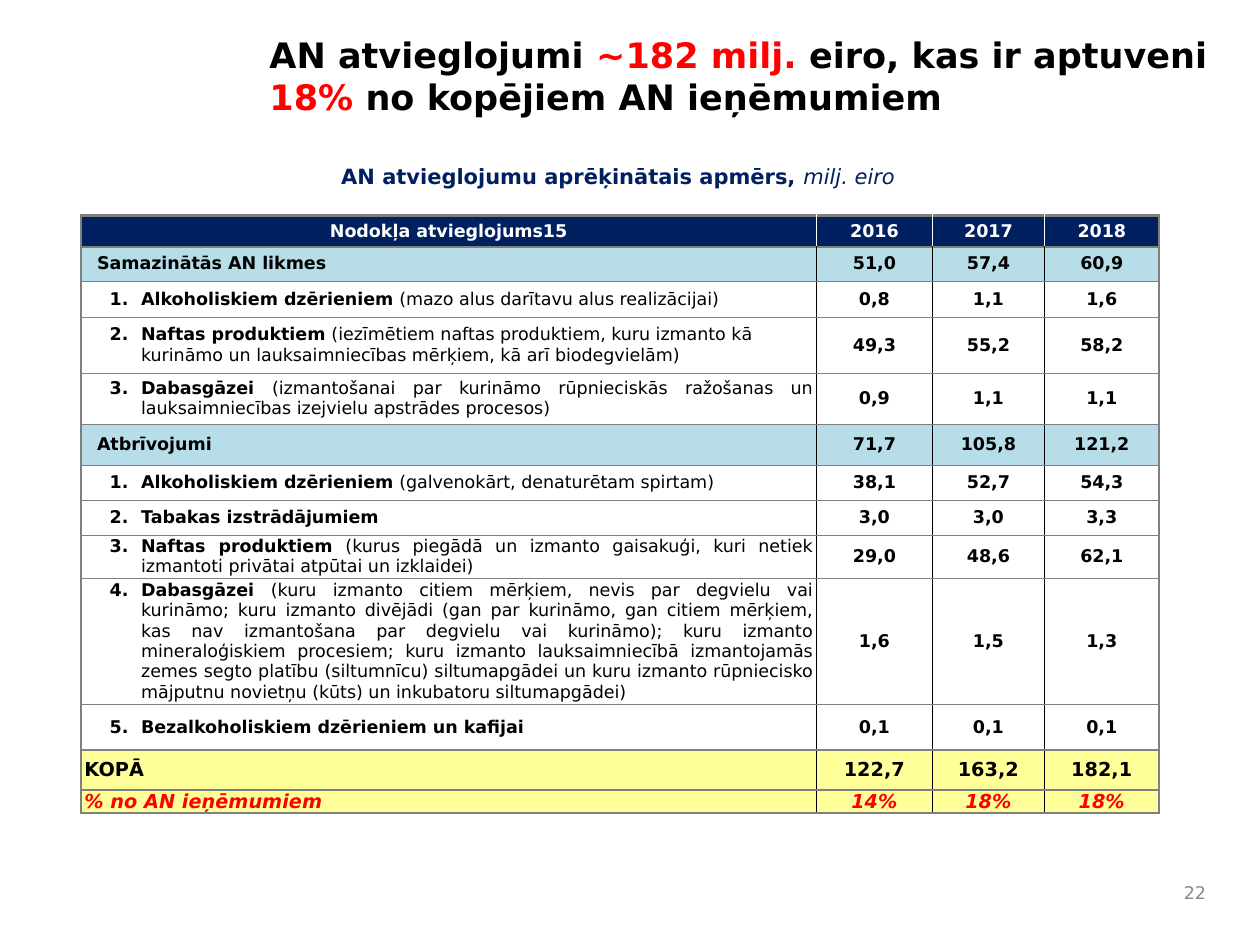
"""Build a slide on excise duty reliefs: heading, caption and a table by year."""
import pptx
import pptx.dml.color
import pptx.enum.text
import pptx.oxml.ns
import pptx.util
from lxml import etree

ALIGN = pptx.enum.text.PP_ALIGN
ANCHOR = pptx.enum.text.MSO_ANCHOR

THEME = {
    "font": "DejaVu Sans",
    "black": "000000", "white": "FFFFFF", "red": "FF0000", "navy": "002060",
    "blue": "B7DEE8", "yellow": "FFFF99", "rule": "808080", "muted": "898989",
    "heading": 20, "caption": 12, "total": 11, "body": 10,
    "thick": 1.5, "medium": 0.5, "thin": 0.25,
}
SLIDE_WIDTH, SLIDE_HEIGHT = 10, 7.5

HEADING = [("AN atvieglojumi ", "black"), ("~182 milj.", "red"),
           ("\xa0eiro, kas ir aptuveni ", "black"), ("18%", "red"),
           (" no kopējiem AN ieņēmumiem", "black")]
CAPTION = ("AN atvieglojumu aprēķinātais apmērs, ", "milj. eiro")
PAGE_NUMBER = "22"

RELIEFS = [
    ("header", 0.25, "Nodokļa atvieglojums15", "", "2016 2017 2018"),
    ("group", 0.27, "Samazinātās AN likmes", "", "51,0 57,4 60,9"),
    ("item", 0.29, "Alkoholiskiem dzērieniem ", "(mazo alus darītavu alus realizācijai)",
     "0,8 1,1 1,6"),
    ("item", 0.44, "Naftas produktiem ",
     "(iezīmētiem naftas produktiem, kuru izmanto kā kurināmo un lauksaimniecības "
     "mērķiem, kā arī biodegvielām)", "49,3 55,2 58,2"),
    ("justified", 0.41, "Dabasgāzei ",
     "(izmantošanai par kurināmo rūpnieciskās ražošanas un lauksaimniecības "
     "izejvielu apstrādes procesos)", "0,9 1,1 1,1"),
    ("group", 0.32, "Atbrīvojumi", "", "71,7 105,8 121,2"),
    ("justified", 0.28, "Alkoholiskiem dzērieniem ", "(galvenokārt, denaturētam spirtam)",
     "38,1 52,7 54,3"),
    ("justified", 0.28, "Tabakas izstrādājumiem", "", "3,0 3,0 3,3"),
    ("justified", 0.34, "Naftas produktiem ",
     "(kurus piegādā un izmanto gaisakuģi, kuri netiek izmantoti privātai atpūtai "
     "un izklaidei)", "29,0 48,6 62,1"),
    ("justified", 1.0, "Dabasgāzei ",
     "(kuru izmanto citiem mērķiem, nevis par degvielu vai kurināmo; kuru izmanto "
     "divējādi (gan par kurināmo, gan citiem mērķiem, kas nav izmantošana par degvielu "
     "vai kurināmo); kuru izmanto mineraloģiskiem procesiem; kuru izmanto "
     "lauksaimniecībā izmantojamās zemes segto platību (siltumnīcu) siltumapgādei un "
     "kuru izmanto rūpniecisko mājputnu novietņu (kūts) un inkubatoru siltumapgādei)",
     "1,6 1,5 1,3"),
    ("item", 0.36, "Bezalkoholiskiem dzērieniem un kafijai", "", "0,1 0,1 0,1"),
    ("total", 0.32, "KOPĀ", "", "122,7 163,2 182,1"),
    ("share", 0.18, "% no AN ieņēmumiem", "", "14% 18% 18%"),
]
COLUMN_WIDTHS = [5.84, 0.92, 0.89, 0.91]

ROW_LOOKS = {
    "header": ("navy", "white", "body", ALIGN.CENTER),
    "group": ("blue", "black", "body", ALIGN.LEFT),
    "item": ("white", "black", "body", ALIGN.LEFT),
    "justified": ("white", "black", "body", ALIGN.JUSTIFY),
    "total": ("yellow", "black", "total", ALIGN.LEFT),
    "share": ("yellow", "red", "total", ALIGN.LEFT),
}
NUMBERED = ("item", "justified")
FRAMED = ("header", "total", "share")


def rgb(name):
    return pptx.dml.color.RGBColor.from_string(THEME[name])


def set_font(paragraph, size, color=None, bold=None, italic=None):
    font = paragraph.font
    font.name, font.size = THEME["font"], pptx.util.Pt(THEME[size])
    font.bold, font.italic = bold, italic
    if color:
        font.color.rgb = rgb(color)


def add_run(paragraph, text):
    run = paragraph.add_run()
    run.text = text
    return run


def add_text_area(slide, left, top, width, height):
    area = slide.shapes.add_textbox(*map(pptx.util.Inches, (left, top, width, height)))
    area.text_frame.word_wrap = True
    return area.text_frame


def add_child(parent, tag, **attributes):
    return etree.SubElement(parent, pptx.oxml.ns.qn(tag), **attributes)


def indent(paragraph, margin, hanging=0, number=None):
    properties = paragraph._p.get_or_add_pPr()
    properties.set("marL", str(pptx.util.Inches(margin)))
    properties.set("indent", str(pptx.util.Inches(-hanging)))
    if number:
        add_child(properties, "a:buFont", typeface="+mj-lt")
        add_child(properties, "a:buAutoNum", type="arabicPeriod", startAt=str(number))


def set_borders(cell, sides):
    properties = cell._tc.get_or_add_tcPr()
    for side, (color, weight) in zip("LRTB", sides):
        line = add_child(properties, f"a:ln{side}", w=str(pptx.util.Pt(THEME[weight])))
        add_child(add_child(line, "a:solidFill"), "a:srgbClr", val=THEME[color])


def cell_borders(row, column):
    kinds = [relief[0] for relief in RELIEFS]
    outer = ("rule", "thick")
    inner = ("white" if kinds[row] == "header" else "black", "medium")

    def level(edge):
        framed = any(kind in FRAMED for kind in kinds[max(edge - 1, 0):edge + 1])
        return outer if framed else ("rule", "thin")

    return (outer if column == 0 else inner,
            outer if column == len(COLUMN_WIDTHS) - 1 else inner,
            level(row), level(row + 1))


def add_reliefs(slide, left, top):
    heights = [relief[1] for relief in RELIEFS]
    table = slide.shapes.add_table(
        len(RELIEFS), len(COLUMN_WIDTHS),
        *map(pptx.util.Inches, (left, top, sum(COLUMN_WIDTHS), sum(heights)))).table
    for column, width in zip(table.columns, COLUMN_WIDTHS):
        column.width = pptx.util.Inches(width)
    number = 0
    for row, (kind, height, name, detail, amounts) in enumerate(RELIEFS):
        table.rows[row].height = pptx.util.Inches(height)
        fill, color, size, name_align = ROW_LOOKS[kind]
        number = number + 1 if kind in NUMBERED else 0
        for column, text in enumerate([name, *amounts.split()]):
            cell = table.cell(row, column)
            cell.vertical_anchor = ANCHOR.MIDDLE
            cell.margin_left = cell.margin_right = pptx.util.Inches(0.03)
            cell.margin_top = cell.margin_bottom = 0
            set_borders(cell, cell_borders(row, column))
            cell.fill.solid()
            cell.fill.fore_color.rgb = rgb(fill)
            paragraph = cell.text_frame.paragraphs[0]
            paragraph.alignment = ALIGN.CENTER if column else name_align
            if column == 0 and number:
                indent(paragraph, 0.45, 0.25, number)
            elif column == 0 and kind == "group":
                indent(paragraph, 0.1)
            set_font(paragraph, size, color, True, kind == "share")
            add_run(paragraph, text)
            if column == 0 and detail:
                add_run(paragraph, detail).font.bold = False


def main():
    deck = pptx.Presentation()
    deck.slide_width = pptx.util.Inches(SLIDE_WIDTH)
    deck.slide_height = pptx.util.Inches(SLIDE_HEIGHT)
    slide = deck.slides.add_slide(deck.slide_layouts[6])

    heading = add_text_area(slide, 2.04, 0.22, 7.7, 1.03).paragraphs[0]
    set_font(heading, "heading", bold=True)
    for text, color in HEADING:
        add_run(heading, text).font.color.rgb = rgb(color)

    caption = add_text_area(slide, 2.61, 1.25, 5.52, 0.3).paragraphs[0]
    set_font(caption, "caption", "navy")
    subject, unit = (add_run(caption, text) for text in CAPTION)
    subject.font.bold = True
    unit.font.italic = True

    add_reliefs(slide, 0.64, 1.71)

    footer = add_text_area(slide, 9.21, 6.92, 0.46, 0.33)
    footer.vertical_anchor = ANCHOR.MIDDLE
    page = footer.paragraphs[0]
    page.alignment = ALIGN.RIGHT
    set_font(page, "body", "muted")
    add_run(page, PAGE_NUMBER)
    deck.save("out.pptx")


if __name__ == "__main__":
    main()
